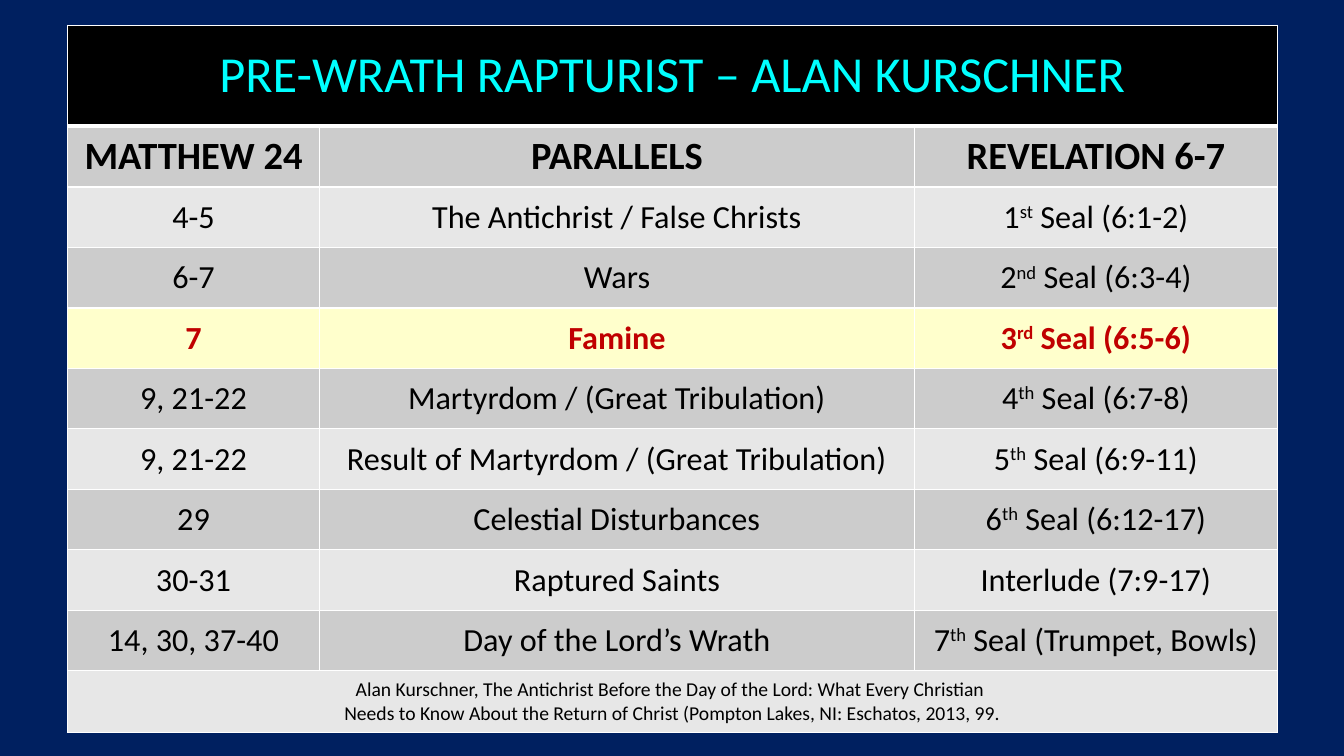
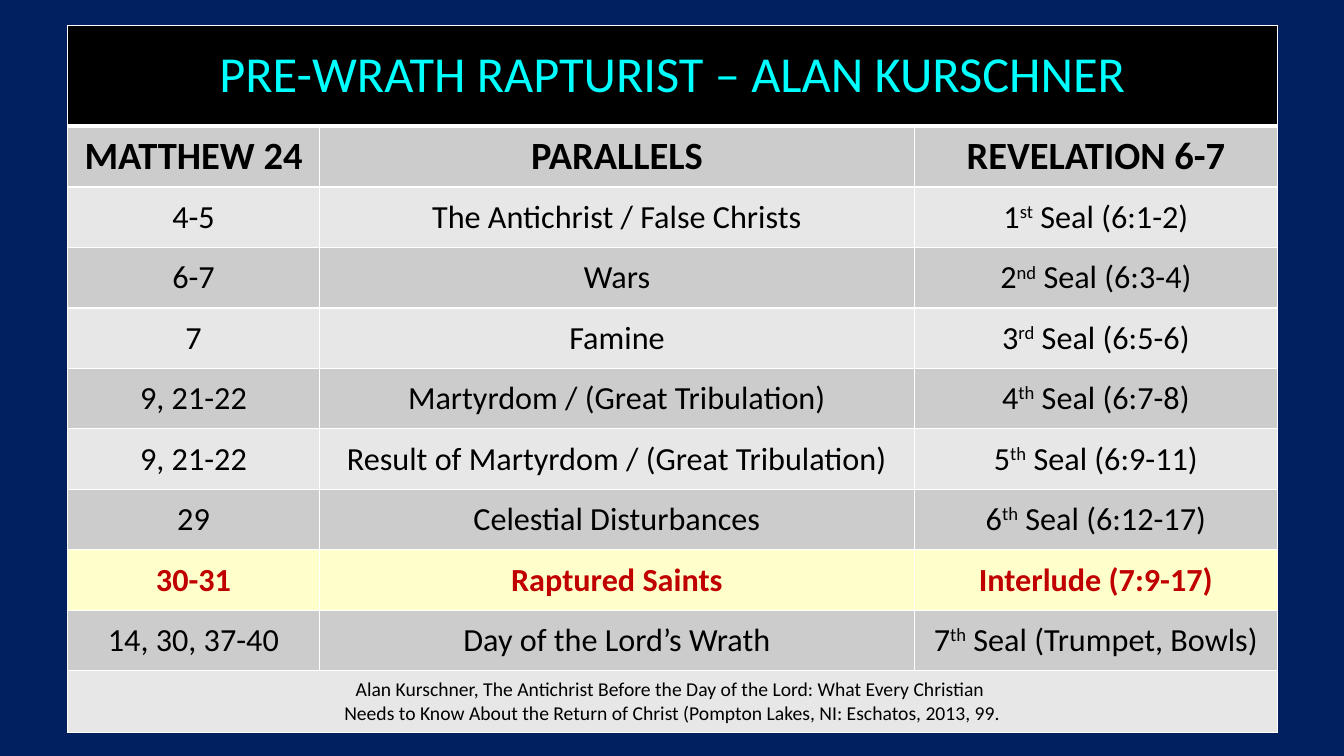
from lxml import etree
from pptx import Presentation
from pptx.dml.color import RGBColor
from pptx.enum.text import MSO_ANCHOR, PP_ALIGN
from pptx.oxml.ns import qn
from pptx.util import Inches, Pt

MIDDLE = MSO_ANCHOR.MIDDLE
CENTER = PP_ALIGN.CENTER
BLANK = 6

FONT = "Calibri"
HEX = {
    "page": "002060", "title": "00FFFF", "black": "000000", "dark": "CCCCCC",
    "light": "E7E7E7", "mark": "FFFFCC", "red": "C00000", "rule": "FFFFFF",
}

TITLE = "PRE-WRATH RAPTURIST – ALAN KURSCHNER"
HEADS = ("MATTHEW 24", "PARALLELS", "REVELATION 6-7")
# Text between bars is raised
ROWS = (
    ("4-5", "The Antichrist / False Christs", "1|st| Seal (6:1-2)"),
    ("6-7", "Wars", "2|nd| Seal (6:3-4)"),
    ("7", "Famine", "3|rd| Seal (6:5-6)"),
    ("9, 21-22", "Martyrdom / (Great Tribulation)", "4|th| Seal (6:7-8)"),
    ("9, 21-22", "Result of Martyrdom / (Great Tribulation)",
     "5|th| Seal (6:9-11)"),
    ("29", "Celestial Disturbances", "6|th| Seal (6:12-17)"),
    ("30-31", "Raptured Saints", "Interlude (7:9-17)"),
    ("14, 30, 37-40", "Day of the Lord’s Wrath",
     "7|th| Seal (Trumpet, Bowls)"),
)
SOURCE = (
    "Alan Kurschner, The Antichrist Before the Day of the Lord: "
    "What Every Christian ",
    "Needs to Know About the Return of Christ "
    "(Pompton Lakes, NI: Eschatos, 2013, 99.",
)
WIDTHS = (2.5, 5.9, 3.6)
HEIGHTS = (1,) + (0.6,) * (len(ROWS) + 2)


def rgb(name):
    return RGBColor.from_string(HEX[name])


class Deck:
    """Holds the style and the current slide."""

    def __init__(self):
        self.prs = Presentation()
        self.prs.slide_width = Inches(13.33)
        self.prs.slide_height = Inches(7.5)
        self.slide = None

    def page(self):
        self.slide = self.prs.slides.add_slide(self.prs.slide_layouts[BLANK])
        fill = self.slide.background.fill
        fill.solid()
        fill.fore_color.rgb = rgb("page")

    def grid(self, left, top, widths, heights):
        frame = self.slide.shapes.add_table(
            len(heights), len(widths), Inches(left), Inches(top),
            Inches(sum(widths)), Inches(sum(heights)))
        table = frame.table
        table.first_row = table.horz_banding = False
        for col, width in zip(table.columns, widths):
            col.width = Inches(width)
        for row, height in zip(table.rows, heights):
            row.height = Inches(height)
        return table

    def edges(self, cell, top=1, bottom=1):
        props = cell._tc.get_or_add_tcPr()
        sides = {"lnL": 1, "lnR": 1, "lnT": top, "lnB": bottom}
        for tag, width in sides.items():
            line = etree.SubElement(props, qn("a:" + tag), w=str(Pt(width)))
            solid = etree.SubElement(line, qn("a:solidFill"))
            etree.SubElement(solid, qn("a:srgbClr"), val=HEX["rule"])

    def cell(self, cell, lines, size, fill, color="black", bold=False):
        cell.vertical_anchor = MIDDLE
        cell.margin_left = cell.margin_right = Inches(0.15)
        cell.margin_top = cell.margin_bottom = Inches(0.07)
        cell.fill.solid()
        cell.fill.fore_color.rgb = rgb(fill)
        frame = cell.text_frame
        for i, line in enumerate(lines):
            para = frame.add_paragraph() if i else frame.paragraphs[0]
            para.alignment = CENTER
            for j, text in enumerate(line.split("|")):
                run = para.add_run()
                run.text = text
                font = run.font
                font.name, font.size, font.bold = FONT, Pt(size), bold
                font.color.rgb = rgb(color)
                if j % 2:
                    run._r.get_or_add_rPr().set("baseline", "30000")

    def chart(self, marked):
        """Draw the table of parallels with one row marked."""
        table = self.grid(0.67, 0.25, WIDTHS, HEIGHTS)
        last = len(HEIGHTS) - 1
        for r in range(last + 1):
            for c in range(len(WIDTHS)):
                self.edges(table.cell(r, c), top=3 if r == 1 else 1,
                           bottom=3 if r == 0 else 1)

        # Title and source rows span the table
        for r in (0, last):
            table.cell(r, 0).merge(table.cell(r, len(WIDTHS) - 1))
        self.cell(table.cell(0, 0), [TITLE], 36, "black", "title")
        self.cell(table.cell(last, 0), SOURCE, 14, "light")

        # Column heads
        for c, text in enumerate(HEADS):
            self.cell(table.cell(1, c), [text], 27.5, "dark", bold=True)

        # Banded body rows
        for r, row in enumerate(ROWS):
            hit = row[0] == marked
            fill = "mark" if hit else ("light", "dark")[r % 2]
            color = "red" if hit else "black"
            for c, text in enumerate(row):
                self.cell(table.cell(r + 2, c), [text], 23, fill, color, hit)


def main():
    deck = Deck()
    for verse in ("7", "30-31"):
        deck.page()
        deck.chart(verse)
    deck.prs.save("out.pptx")


if __name__ == "__main__":
    main()
